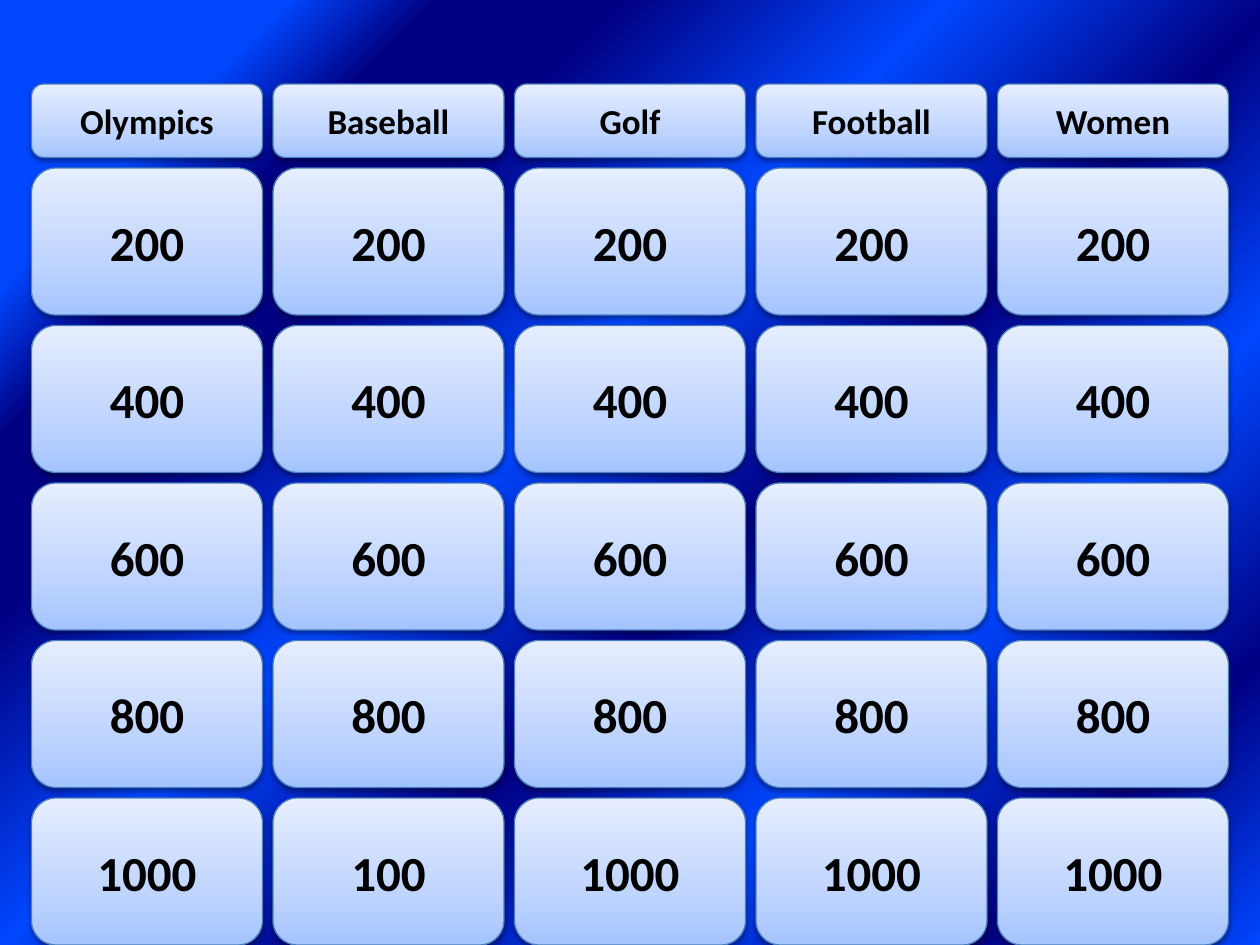
from lxml import etree
from pptx import Presentation
from pptx import util as u
from pptx.dml.color import RGBColor
from pptx.enum import shapes, text
from pptx.oxml.ns import qn

BRIGHT = RGBColor(0x00, 0x47, 0xFF)
NAVY = RGBColor(0x00, 0x00, 0x82)
TILE_BOTTOM = RGBColor(0xA4, 0xC4, 0xFF)
TILE_MIDDLE = RGBColor(0xBF, 0xD4, 0xFF)
TILE_TOP = RGBColor(0xE6, 0xEE, 0xFF)
BORDER = RGBColor(0x4B, 0x7E, 0xBC)
BLACK = RGBColor(0x00, 0x00, 0x00)

BACKDROP = [(0, BRIGHT), (13, BRIGHT), (20, NAVY), (28, NAVY), (43, BRIGHT),
            (58, NAVY), (72, BRIGHT), (87, NAVY), (100, BRIGHT)]
TILE_SHADES = [(0, TILE_BOTTOM), (35, TILE_MIDDLE), (100, TILE_TOP)]

CATEGORIES = ["Olympics", "Baseball", "Golf", "Football", "Women"]
POINTS = [
    ["200"] * 5,
    ["400"] * 5,
    ["600"] * 5,
    ["800"] * 5,
    ["1000", "100", "1000", "1000", "1000"],
]

# Board grid, in units of a twelfth of an inch
UNIT = u.Inches(1) // 12
GAP = 1
LEFT, TILE_WIDTH = 3, 22
HEADER_TOP, HEADER_HEIGHT = 8, 7
POINTS_TOP, POINTS_HEIGHT = HEADER_TOP + HEADER_HEIGHT + GAP, 14


def paint_gradient(fill, element, stops, angle):
    """Fill with (percent, colour) stops; angle is counter-clockwise."""
    fill.gradient()
    fill.gradient_angle = angle
    stop_list = element.find(".//" + qn("a:gsLst"))
    for old_stop in list(stop_list):
        stop_list.remove(old_stop)
    for percent, colour in stops:
        stop = etree.SubElement(stop_list, qn("a:gs"), pos=str(percent * 1000))
        etree.SubElement(stop, qn("a:srgbClr"), val=str(colour))


def add_tile(label, column, top, height, size):
    tile = slide.shapes.add_shape(
        shapes.MSO_SHAPE.ROUNDED_RECTANGLE,
        (LEFT + column * (TILE_WIDTH + GAP)) * UNIT, top * UNIT,
        TILE_WIDTH * UNIT, height * UNIT)
    paint_gradient(tile.fill, tile.element, TILE_SHADES, 90)
    tile.line.color.rgb = BORDER
    tile.line.width = u.Pt(0.75)

    # Soft shadow straight below
    tile.shadow.inherit = False
    effects = tile.element.find(".//" + qn("a:effectLst"))
    shadow = etree.SubElement(
        effects, qn("a:outerShdw"), blurRad=str(u.Pt(3.15)),
        dist=str(u.Pt(1.57)), dir=str(90 * 60000), rotWithShape="0")
    shade = etree.SubElement(shadow, qn("a:srgbClr"), val=str(BLACK))
    etree.SubElement(shade, qn("a:alpha"), val="38000")

    tile.text_frame.vertical_anchor = text.MSO_ANCHOR.MIDDLE
    caption = tile.text_frame.paragraphs[0]
    caption.text = label
    caption.alignment = text.PP_ALIGN.CENTER
    caption.font.name = "Calibri"
    caption.font.size = u.Pt(size)
    caption.font.bold = True
    caption.font.color.rgb = BLACK


deck = Presentation()
deck.slide_width, deck.slide_height = u.Inches(10), u.Inches(7.5)
slide = deck.slides.add_slide(deck.slide_layouts[6])

# Striped background
paint_gradient(slide.background.fill, slide.element, BACKDROP, 315)

# Category headers
for column, category in enumerate(CATEGORIES):
    add_tile(category, column, HEADER_TOP, HEADER_HEIGHT, 20)

# Point values
for row, values in enumerate(POINTS):
    top = POINTS_TOP + row * (POINTS_HEIGHT + GAP)
    for column, value in enumerate(values):
        add_tile(value, column, top, POINTS_HEIGHT, 28)

deck.save("out.pptx")
